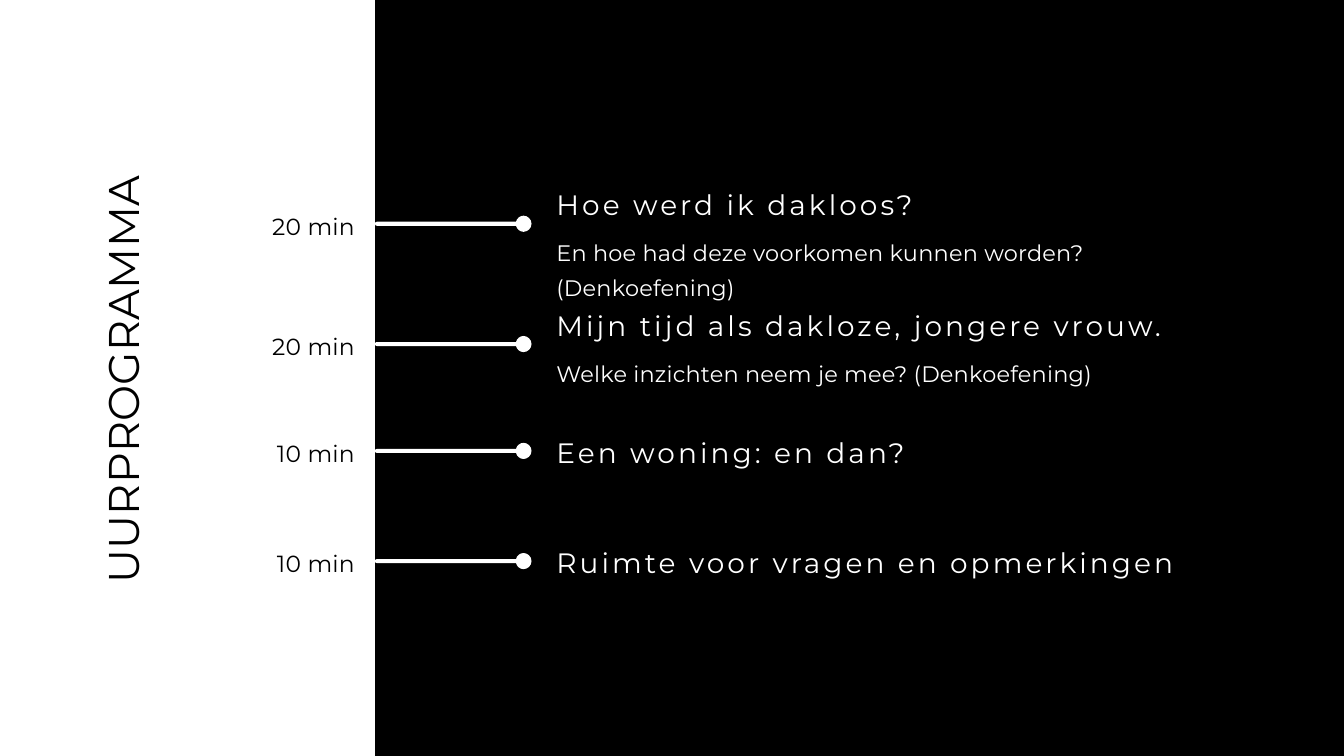
from dataclasses import dataclass

from lxml.etree import SubElement
from pptx import Presentation
from pptx.dml.color import RGBColor
from pptx.enum.shapes import MSO_SHAPE
from pptx.enum.text import PP_ALIGN
from pptx.oxml.ns import qn
from pptx.shapes.autoshape import Shape
from pptx.slide import Slide
from pptx.util import Emu, Pt

EMU_PER_PX = 9144
FONT = "Montserrat"
COLOURS = {"background": "000000", "panel": "FFFFFF", "dark": "000000", "light": "FFFFFF"}

PIN_LEFT = 558
PIN_START = (3, 3)
PIN_SEGMENTS = [
    [(210, 3)],
    [(211, 8), (216, 12), (221, 12)],
    [(227, 12), (233, 7), (233, 0)],
    [(233, -7), (227, -12), (221, -12)],
    [(216, -12), (211, -8), (210, -3)],
    [(3, -3)],
    [(1, -3), (0, -2), (0, 0)],
    [(0, 2), (1, 3), (3, 3)],
]
CONTENT_LEFT, CONTENT_WIDTH, DETAIL_WIDTH = 828, 1059, 1050
DETAIL_OFFSET = 73
TIME_LEFT, TIME_WIDTH, TIME_OFFSET = 389, 139, -28


@dataclass(frozen=True)
class Box:
    left: int
    top: int
    width: int
    height: int


@dataclass(frozen=True)
class TextStyle:
    size: int
    line_height: float
    spacing: float
    colour: str
    alignment: PP_ALIGN = PP_ALIGN.LEFT


@dataclass(frozen=True)
class ProgrammeItem:
    time: str
    title: str
    centre: int
    title_top: int
    detail: str = ""


HEADING = TextStyle(46, 58, 0.4, "dark", PP_ALIGN.CENTER)
TIME = TextStyle(25, 37.5, 0.25, "dark", PP_ALIGN.RIGHT)
TITLE = TextStyle(30, 42, 3.3, "light")
DETAIL = TextStyle(24, 37.5, 0.25, "light")

PROGRAMME = [
    ProgrammeItem("20 min", "Hoe werd ik dakloos?", 333, 271,
                  "En hoe had deze voorkomen kunnen worden? (Denkoefening)"),
    ProgrammeItem("20 min", "Mijn tijd als dakloze, jongere vrouw.", 512, 451,
                  "Welke inzichten neem je mee? (Denkoefening)"),
    ProgrammeItem("10 min", "Een woning: en dan?", 671, 640),
    ProgrammeItem("10 min", "Ruimte voor vragen en opmerkingen", 835, 804),
]


def px(value: int) -> Emu:
    return Emu(value * EMU_PER_PX)


def colour(name: str) -> RGBColor:
    return RGBColor.from_string(COLOURS[name])


def paint(shape: Shape, name: str) -> None:
    shape.shadow.inherit = False
    shape.fill.solid()
    shape.fill.fore_color.rgb = colour(name)
    shape.line.fill.background()


def add_panel(slide: Slide, box: Box) -> None:
    shape = slide.shapes.add_shape(
        MSO_SHAPE.RECTANGLE, px(box.left), px(box.top), px(box.width), px(box.height))
    paint(shape, "panel")


def add_text(slide: Slide, box: Box, text: str, style: TextStyle, rotation: int = 0) -> None:
    shape = slide.shapes.add_textbox(px(box.left), px(box.top), px(box.width), px(box.height))
    shape.rotation = rotation
    frame = shape.text_frame
    frame.word_wrap = True
    frame.margin_left = frame.margin_right = frame.margin_top = frame.margin_bottom = 0
    paragraph = frame.paragraphs[0]
    paragraph.alignment = style.alignment
    paragraph.line_spacing = Pt(style.line_height)
    run = paragraph.add_run()
    run.text = text
    run.font.name = FONT
    run.font.size = Pt(style.size)
    run.font.color.rgb = colour(style.colour)
    run.font._element.set("spc", str(round(style.spacing * 100)))


def add_pin(slide: Slide, centre: int) -> None:
    builder = slide.shapes.build_freeform(*PIN_START, scale=EMU_PER_PX)
    builder.add_line_segments([point for segment in PIN_SEGMENTS for point in segment])
    shape = builder.convert_to_shape(px(PIN_LEFT), px(centre))
    outline = shape._element.find(".//" + qn("a:path"))
    lines = iter(outline.findall(qn("a:lnTo")))
    for segment in PIN_SEGMENTS:
        segment_lines = [next(lines) for _ in segment]
        if len(segment) == 3:
            curve = SubElement(outline, qn("a:cubicBezTo"))
            for line in segment_lines:
                curve.append(line[0])
                outline.remove(line)
        else:
            outline.append(segment_lines[0])
    closing = outline.find(qn("a:close"))
    if closing is None:
        SubElement(outline, qn("a:close"))
    else:
        outline.append(closing)
    paint(shape, "light")


def add_item(slide: Slide, item: ProgrammeItem) -> None:
    add_pin(slide, item.centre)
    add_text(slide, Box(TIME_LEFT, item.centre + TIME_OFFSET, TIME_WIDTH, 49), item.time, TIME)
    add_text(slide, Box(CONTENT_LEFT, item.title_top, CONTENT_WIDTH, 55), item.title, TITLE)
    if item.detail:
        detail_box = Box(CONTENT_LEFT, item.title_top + DETAIL_OFFSET, DETAIL_WIDTH, 48)
        add_text(slide, detail_box, item.detail, DETAIL)


def main() -> None:
    presentation = Presentation()
    presentation.slide_width = px(2000)
    presentation.slide_height = px(1125)
    slide = presentation.slides.add_slide(presentation.slide_layouts[6])
    slide.background.fill.solid()
    slide.background.fill.fore_color.rgb = colour("background")
    add_panel(slide, Box(-23, -21, 581, 1167))
    add_text(slide, Box(-268, 526, 894, 78), "UURPROGRAMMA", HEADING, rotation=270)
    for item in PROGRAMME:
        add_item(slide, item)
    presentation.save("out.pptx")


if __name__ == "__main__":
    main()
